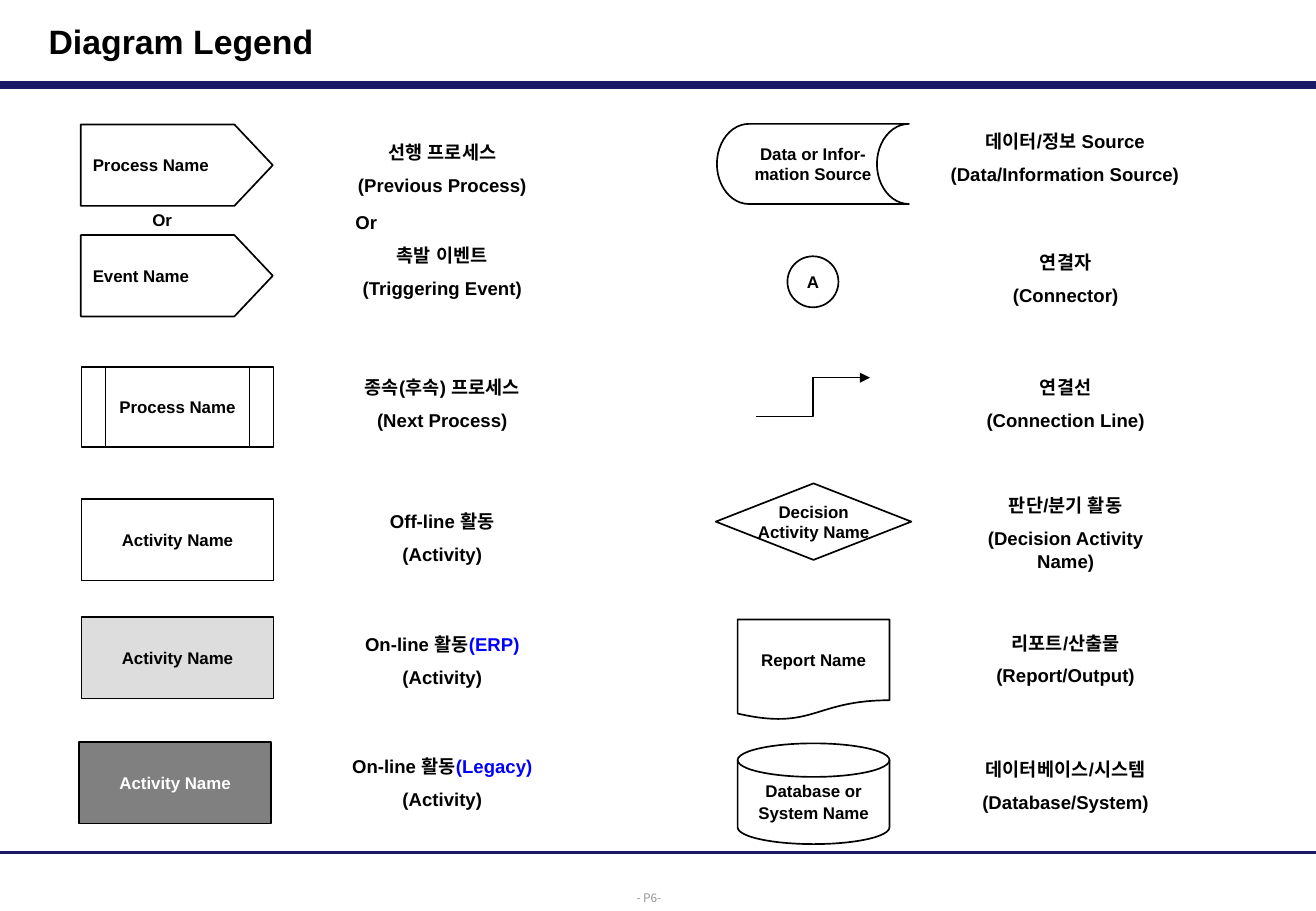
from dataclasses import dataclass

from lxml import etree
from pptx import Presentation
from pptx import util as u
from pptx.dml.color import RGBColor
from pptx.enum import shapes, text
from pptx.oxml import ns

PX = 9144  # EMU per px, 100 px to the inch
WIDTH, HEIGHT = 1083, 750
COLOURS = {
    "ink": "000000",
    "paper": "FFFFFF",
    "rule": "191966",
    "online": "DDDDDD",
    "legacy": "808080",
    "note": "0000FF",
    "page": "969696",
}
G = shapes.MSO_SHAPE
CENTER = text.PP_ALIGN.CENTER
GROW = text.MSO_AUTO_SIZE.SHAPE_TO_FIT_TEXT
NARROW = (4, 5, 4, 5)
NORMAL = (10, 5, 10, 5)


@dataclass(frozen=True)
class Symbol:
    kind: int
    left: int
    top: int
    width: int
    height: int
    lines: tuple[str, ...]
    fill: str = "paper"
    ink: str = "ink"
    insets: tuple[int, ...] = NORMAL
    wrap: bool = False
    gap: float = 0
    sideways: bool = False


@dataclass(frozen=True)
class Label:
    left: int
    top: int
    lines: tuple[str, ...]
    note: str = ""
    width: int = 192
    height: int = 56
    size: int = 11


@dataclass(frozen=True)
class Rule:
    top: int
    weight: float


def activity(left: int, top: int, fill: str, ink: str = "ink") -> Symbol:
    return Symbol(G.RECTANGLE, left, top, 158, 67, ("Activity Name",),
                  fill, ink, NARROW, True)


def preceding(top: int, name: str) -> Symbol:
    return Symbol(G.FLOWCHART_OFFPAGE_CONNECTOR, 112, top, 67, 158, (name,),
                  sideways=True)


SYMBOLS = (
    # Left column
    preceding(57, "Process Name"),
    preceding(148, "Event Name"),
    Symbol(G.FLOWCHART_PREDEFINED_PROCESS, 67, 302, 158, 66, ("Process Name",),
           insets=NARROW, wrap=True),
    activity(67, 411, "paper"),
    activity(67, 508, "online"),
    activity(65, 611, "legacy", "paper"),
    # Right column
    Symbol(G.FLOWCHART_STORED_DATA, 590, 102, 158, 66,
           ("Data or Infor-", "mation Source"), insets=NARROW),
    Symbol(G.FLOWCHART_CONNECTOR, 648, 211, 42, 42, ("A",)),
    Symbol(G.DIAMOND, 589, 398, 161, 63, ("Decision", "Activity Name"),
           insets=(0, 0, 0, 0)),
    Symbol(G.FLOWCHART_DOCUMENT, 607, 510, 125, 83, ("Report Name",)),
    Symbol(G.FLOWCHART_MAGNETIC_DISK, 607, 612, 125, 83,
           ("Database or", "System Name"), gap=1.2),
)
LABELS = (
    # Left column
    Label(268, 111, ("선행 프로세스", "(Previous Process)")),
    Label(100, 168, ("Or",), width=67, height=27, size=10),
    Label(268, 169, ("Or",), width=67, height=28),
    Label(268, 196, ("촉발 이벤트", "(Triggering Event)")),
    Label(268, 305, ("종속(후속) 프로세스", "(Next Process)")),
    Label(268, 415, ("Off-line 활동", "(Activity)")),
    Label(268, 516, ("On-line 활동", "(Activity)"), "(ERP)"),
    Label(268, 617, ("On-line 활동", "(Activity)"), "(Legacy)"),
    # Right column
    Label(768, 102, ("데이터/정보 Source", "(Data/Information Source)"), width=217),
    Label(781, 202, ("연결자", "(Connector)")),
    Label(781, 305, ("연결선", "(Connection Line)")),
    Label(781, 402, ("판단/분기 활동", "(Decision Activity Name)"), height=75),
    Label(781, 515, ("리포트/산출물", "(Report/Output)")),
    Label(781, 619, ("데이터베이스/시스템", "(Database/System)")),
)
RULES = (Rule(70, 4.5), Rule(702, 1.5))


def px(*lengths: int) -> list[u.Emu]:
    return [u.Emu(length * PX) for length in lengths]


def rgb(name: str) -> RGBColor:
    return RGBColor.from_string(COLOURS[name])


def write_run(paragraph, words: str, size: float, ink: str,
              face: str = "Arial", bold: bool = True) -> None:
    run = paragraph.add_run()
    run.text = words
    for key, value in {"name": face, "size": u.Pt(size), "bold": bold}.items():
        setattr(run.font, key, value)
    run.font.color.rgb = rgb(ink)
    etree.SubElement(run.font._element, ns.qn("a:ea")).set("typeface", face)


def write_lines(frame, lines: tuple[str, ...], size: float, ink: str = "ink",
                gap: float = 0, note: str = "") -> None:
    for index, line in enumerate(lines):
        paragraph = frame.add_paragraph() if index else frame.paragraphs[0]
        paragraph.alignment = CENTER
        if index and gap:
            paragraph.space_before = u.Pt(gap)
        write_run(paragraph, line, size, ink)
        if note and not index:
            write_run(paragraph, note, size, "note")


def draw_symbol(slide, symbol: Symbol) -> None:
    shape = slide.shapes.add_shape(symbol.kind, *px(
        symbol.left, symbol.top, symbol.width, symbol.height))
    shape.shadow.inherit = False
    shape.fill.solid()
    shape.fill.fore_color.rgb = rgb(symbol.fill)
    shape.line.color.rgb = rgb("ink")
    shape.line.width = u.Pt(1)
    frame = shape.text_frame
    sides = ("margin_left", "margin_top", "margin_right", "margin_bottom")
    layout = dict(zip(sides, px(*symbol.insets)))
    layout |= {"word_wrap": symbol.wrap, "vertical_anchor": text.MSO_ANCHOR.MIDDLE}
    for key, value in layout.items():
        setattr(frame, key, value)
    if symbol.sideways:
        shape.rotation = 270
        frame._txBody.bodyPr.set("vert", "eaVert")
    write_lines(frame, symbol.lines, 10, symbol.ink, symbol.gap)


def draw_label(slide, label: Label) -> None:
    box = slide.shapes.add_textbox(*px(
        label.left, label.top, label.width, label.height))
    box.text_frame.word_wrap = True
    box.text_frame.auto_size = GROW
    write_lines(box.text_frame, label.lines, label.size, gap=6.3, note=label.note)


def draw_line(slide, kind, ends: tuple[int, ...], colour: str, weight: float):
    line = slide.shapes.add_connector(kind, *px(*ends))
    line.line.color.rgb = rgb(colour)
    line.line.width = u.Pt(weight)
    etree.SubElement(line._element.spPr, ns.qn("a:effectLst"))
    return line


def main() -> None:
    deck = Presentation()
    deck.slide_width, deck.slide_height = px(WIDTH, HEIGHT)
    slide = deck.slides.add_slide(deck.slide_layouts[5])

    # Title and frame rules
    title = slide.shapes.title
    place = zip(("left", "top", "width", "height"), px(30, 12, 715, 44))
    for key, value in place:
        setattr(title, key, value)
    title.text_frame.vertical_anchor = text.MSO_ANCHOR.MIDDLE
    title.text_frame.auto_size = GROW
    heading = title.text_frame.paragraphs[0]
    heading.alignment = text.PP_ALIGN.LEFT
    write_run(heading, "Diagram Legend", 20, "ink")
    for rule in RULES:
        draw_line(slide, shapes.MSO_CONNECTOR.STRAIGHT,
                  (0, rule.top, WIDTH, rule.top), "rule", rule.weight)

    # Legend symbols and their meanings
    for symbol in SYMBOLS:
        draw_symbol(slide, symbol)
    for label in LABELS:
        draw_label(slide, label)
    connection = draw_line(slide, shapes.MSO_CONNECTOR.ELBOW,
                           (622, 343, 716, 311), "ink", 0.75)
    arrow = etree.SubElement(connection.line._get_or_add_ln(), ns.qn("a:tailEnd"))
    arrow.set("type", "triangle")

    # Page number
    page = slide.shapes.add_textbox(*px(514, 725, 50, 24)).text_frame
    page.word_wrap = False
    page.auto_size = GROW
    page.paragraphs[0].line_spacing = 1.3
    write_run(page.paragraphs[0], "- P6-", 7, "page", "Noto Sans CJK KR", False)

    deck.save("out.pptx")


if __name__ == "__main__":
    main()
